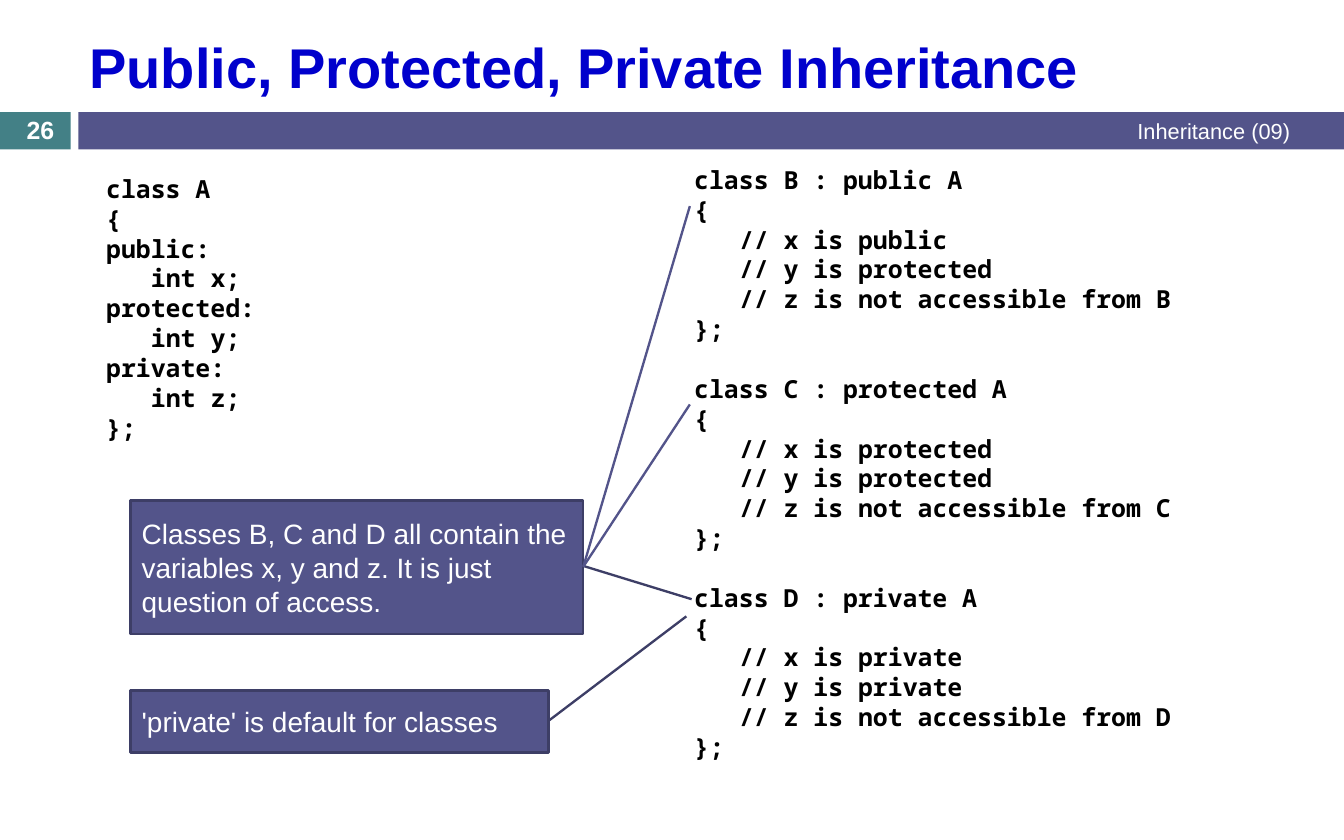
"""Build a slide on public, protected and private inheritance."""
from dataclasses import dataclass

from lxml.etree import SubElement
from pptx import Presentation
from pptx.dml.color import RGBColor
from pptx.enum.shapes import MSO_CONNECTOR as Connector, MSO_SHAPE as Shape
from pptx.enum.text import MSO_ANCHOR as Anchor, PP_ALIGN as Align
from pptx.oxml.ns import qn
from pptx.util import Pt

SANS, MONO = "Arial", "Noto Sans Mono"
PURPLE, TEAL, EDGE = "53548A", "438086", "3D3E66"
WHITE, BLACK, BLUE = "FFFFFF", "000000", "0000CC"
LINE_WIDTH = 1.5
CODE_SIZE, CODE_PITCH, CODE_INDENT = 16, 19.2, 28.8


@dataclass(frozen=True)
class Area:
    left: float
    top: float
    width: float
    height: float

    def lengths(self) -> tuple:
        return Pt(self.left), Pt(self.top), Pt(self.width), Pt(self.height)


@dataclass(frozen=True)
class Label:
    text: str
    area: Area
    size: float
    color: str = WHITE
    bold: bool = False
    align: Align = Align.LEFT


@dataclass(frozen=True)
class Callout:
    label: Label
    pointer: tuple


@dataclass(frozen=True)
class Code:
    area: Area
    classes: list


def derived(name: str, access: str, inherited: tuple) -> list:
    x, y = inherited
    return [f"class {name} : {access} A", "{", f"\t// x is {x}", f"\t// y is {y}",
            f"\t// z is not accessible from {name}", "};"]


BARS = [(Area(0, 72, 45.4, 24), TEAL), (Area(50.4, 72, 813.6, 24), PURPLE)]

LABELS = [
    Label("Public, Protected, Private Inheritance", Area(50.4, 13.7, 785.5, 57.6), 36, BLUE, True),
    Label("Inheritance (09)", Area(444.2, 72, 392.4, 24), 14, align=Align.RIGHT),
    Label("26", Area(0, 72.7, 51.8, 21.6), 16, bold=True, align=Align.CENTER),
]

CODES = [
    Code(Area(61.2, 108, 156.2, 181.4), [
        ["class A", "{", "public:", "\tint x;", "protected:", "\tint y;", "private:", "\tint z;", "};"],
    ]),
    Code(Area(439.2, 102.2, 390.2, 395.3), [
        derived("B", "public", ("public", "protected")),
        derived("C", "protected", ("protected", "protected")),
        derived("D", "private", ("private", "private")),
    ]),
]

CALLOUTS = [
    Callout(Label("'private' is default for classes", Area(84, 444, 268.6, 39.8), 18),
            (0.49, 1, -1.2, 1.33)),
    Callout(Label("Classes B, C and D all contain the variables x, y and z. It is just question of access.",
                  Area(84, 321.8, 290.9, 85.7), 18),
            (0.49, 1, 0.74, 1.24)),
]

POINTER_START = (375, 364.3)
POINTER_ENDS = [(443.5, 132.5), (443.5, 260)]


def rgb(color: str) -> RGBColor:
    return RGBColor.from_string(color)


def paint(shape, color: str) -> None:
    shape.shadow.inherit = False
    shape.fill.solid()
    shape.fill.fore_color.rgb = rgb(color)


def set_font(para, name: str, size: float, color: str, bold: bool) -> None:
    font = para.font
    font.name, font.size, font.bold = name, Pt(size), bold
    font.color.rgb = rgb(color)


def write_label(shape, label: Label) -> None:
    frame = shape.text_frame
    frame.word_wrap = True
    frame.vertical_anchor = Anchor.MIDDLE
    para = frame.paragraphs[0]
    para.text, para.alignment = label.text, label.align
    set_font(para, SANS, label.size, label.color, label.bold)


def draw_bar(page, area: Area, color: str) -> None:
    bar = page.shapes.add_shape(Shape.RECTANGLE, *area.lengths())
    paint(bar, color)
    bar.line.fill.background()


def draw_code(page, code: Code) -> None:
    frame = page.shapes.add_textbox(*code.area.lengths()).text_frame
    frame.word_wrap = True
    para = None
    for block, lines in enumerate(code.classes):
        for row, line in enumerate(lines):
            para = frame.add_paragraph() if para else frame.paragraphs[0]
            para.text = line.lstrip("\t")
            para.line_spacing = Pt(CODE_PITCH)
            if block and row == 0:
                para.space_before = Pt(CODE_PITCH)
            if line.startswith("\t"):
                para._p.get_or_add_pPr().set("marL", str(Pt(CODE_INDENT)))
            set_font(para, MONO, CODE_SIZE, BLACK, True)


def draw_callout(page, callout: Callout) -> None:
    shape = page.shapes.add_shape(Shape.LINE_CALLOUT_1, *callout.label.area.lengths())
    for index, value in enumerate(callout.pointer):
        shape.adjustments[index] = value
    paint(shape, PURPLE)
    shape.line.color.rgb = rgb(EDGE)
    shape.line.width = Pt(LINE_WIDTH)
    write_label(shape, callout.label)


def draw_pointer(page, start: tuple, end: tuple) -> None:
    pointer = page.shapes.add_connector(Connector.STRAIGHT, *map(Pt, start + end))
    pointer.line.color.rgb = rgb(PURPLE)
    pointer.line.width = Pt(LINE_WIDTH)
    SubElement(pointer._element.spPr, qn("a:effectLst"))


def main() -> None:
    deck = Presentation()
    deck.slide_width, deck.slide_height = Pt(864), Pt(540)
    page = deck.slides.add_slide(deck.slide_layouts[6])
    for area, color in BARS:
        draw_bar(page, area, color)
    for label in LABELS:
        write_label(page.shapes.add_textbox(*label.area.lengths()), label)
    for code in CODES:
        draw_code(page, code)
    for callout in CALLOUTS:
        draw_callout(page, callout)
    for end in POINTER_ENDS:
        draw_pointer(page, POINTER_START, end)
    deck.save("out.pptx")


if __name__ == "__main__":
    main()
